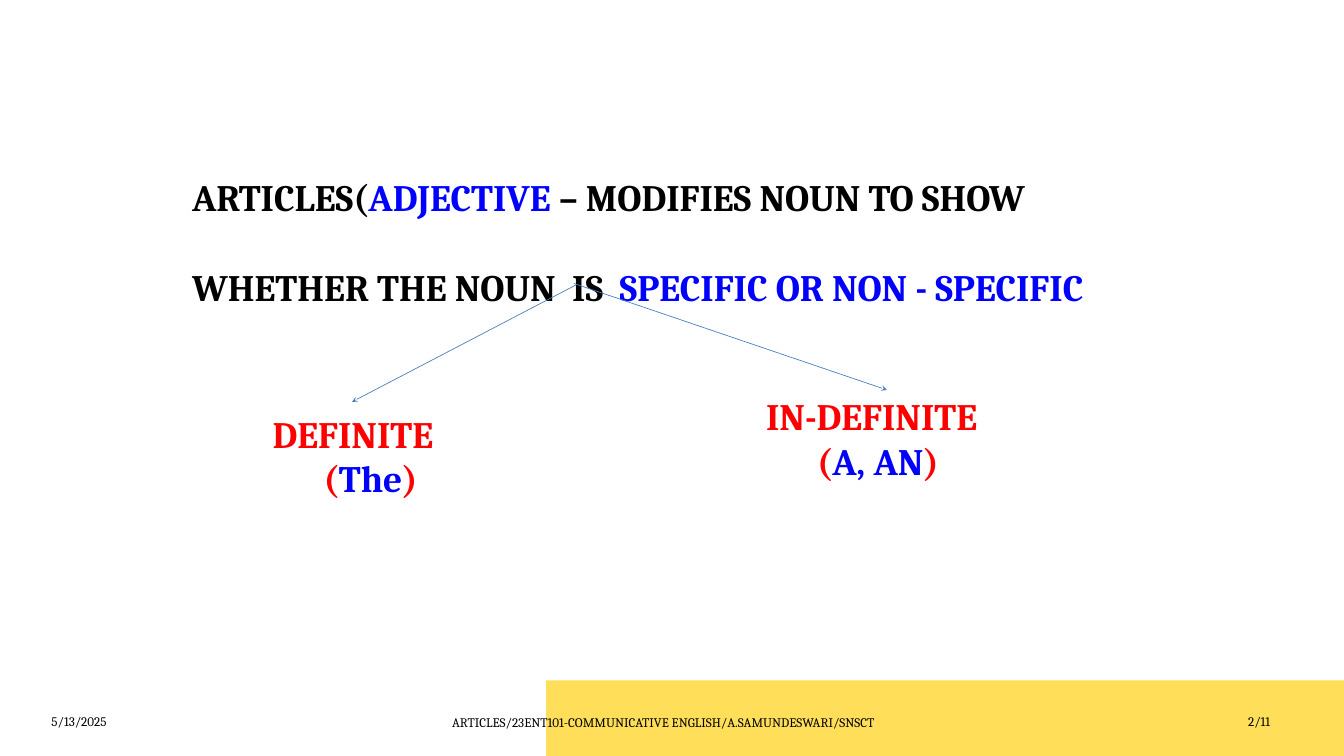
from lxml.etree import SubElement
from pptx import Presentation
from pptx.dml.color import RGBColor
from pptx.enum.shapes import MSO_CONNECTOR as Connector, MSO_SHAPE as Shape
from pptx.enum.text import MSO_ANCHOR as Anchor, MSO_AUTO_SIZE as AutoSize, PP_ALIGN as Align
from pptx.oxml.ns import qn
from pptx.util import Emu, Pt

PX = 9525
FONT = "Cambria"
COLORS = {
    "black": "000000",
    "blue": "0000FF",
    "red": "FF0000",
    "yellow": "FFDE59",
    "arrow": "4A7DBA",
}


def px(value):
    return Emu(value * PX)


def color(name):
    return RGBColor.from_string(COLORS[name])


def add_band(slide, left, top, width, height):
    band = slide.shapes.add_shape(Shape.RECTANGLE, px(left), px(top), px(width), px(height))
    band.shadow.inherit = False
    band.fill.solid()
    band.fill.fore_color.rgb = color("yellow")
    band.line.fill.background()


def add_text_frame(slide, left, top, width, height):
    box = slide.shapes.add_textbox(px(left), px(top), px(width), px(height))
    frame = box.text_frame
    frame.word_wrap = True
    return frame


def add_run(paragraph, text, color_name, size, bold=False):
    run = paragraph.add_run()
    run.text = text
    run.font.name = FONT
    run.font.size = Pt(size)
    run.font.bold = bold
    run.font.color.rgb = color(color_name)


def add_statement(slide, position, lines, spacing=1):
    frame = add_text_frame(slide, *position)
    frame.auto_size = AutoSize.SHAPE_TO_FIT_TEXT
    for index, (indent, runs) in enumerate(lines):
        paragraph = frame.add_paragraph() if index else frame.paragraphs[0]
        paragraph.line_spacing = float(spacing)
        paragraph._p.get_or_add_pPr().set("marL", str(px(indent)))
        for text, color_name in runs:
            add_run(paragraph, text, color_name, 40, True)


def add_footer(slide, position, text, align):
    frame = add_text_frame(slide, *position)
    frame.vertical_anchor = Anchor.MIDDLE
    paragraph = frame.paragraphs[0]
    paragraph.alignment = align
    add_run(paragraph, text, "black", 14)


def add_arrow(slide, start, end):
    points = [px(value) for value in (*start, *end)]
    arrow = slide.shapes.add_connector(Connector.STRAIGHT, *points)
    arrow.line.color.rgb = color("arrow")
    arrow.line.width = Pt(0.75)
    SubElement(arrow.line._get_or_add_ln(), qn("a:tailEnd"), type="stealth")
    SubElement(arrow._element.spPr, qn("a:effectLst"))


def main():
    presentation = Presentation()
    presentation.slide_width, presentation.slide_height = px(1920), px(1080)
    slide = presentation.slides.add_slide(presentation.slide_layouts[6])

    add_band(slide, 780, 972, 1140, 108)
    add_footer(slide, (64, 1012, 224, 38), "5/13/2025", Align.LEFT)
    add_footer(slide, (1600, 1012, 224, 38), "2/11", Align.RIGHT)

    add_statement(slide, (207, 180, 1474, 268), [
        (58, [("ARTICLES(", "black"), ("ADJECTIVE", "blue"),
              (" – MODIFIES NOUN TO SHOW", "black")]),
        (58, [("WHETHER THE NOUN  IS  ", "black"),
              ("SPECIFIC OR NON - SPECIFIC", "blue")]),
    ], 2)
    add_statement(slide, (276, 582, 453, 139), [
        (104, [("DEFINITE", "red")]),
        (177, [("(", "red"), ("The", "blue"), (")", "red")]),
    ])
    add_statement(slide, (1075, 557, 558, 139), [
        (10, [("IN-DEFINITE", "red")]),
        (83, [("(", "red"), ("A, AN", "blue"), (")", "red")]),
    ])

    add_arrow(slide, (823, 407), (503, 574))
    add_arrow(slide, (820, 405), (1267, 557))
    add_footer(slide, (328, 1012, 1240, 40),
               "ARTICLES/23ENT101-COMMUNICATIVE ENGLISH/A.SAMUNDESWARI/SNSCT", Align.CENTER)

    presentation.save("out.pptx")


if __name__ == "__main__":
    main()
